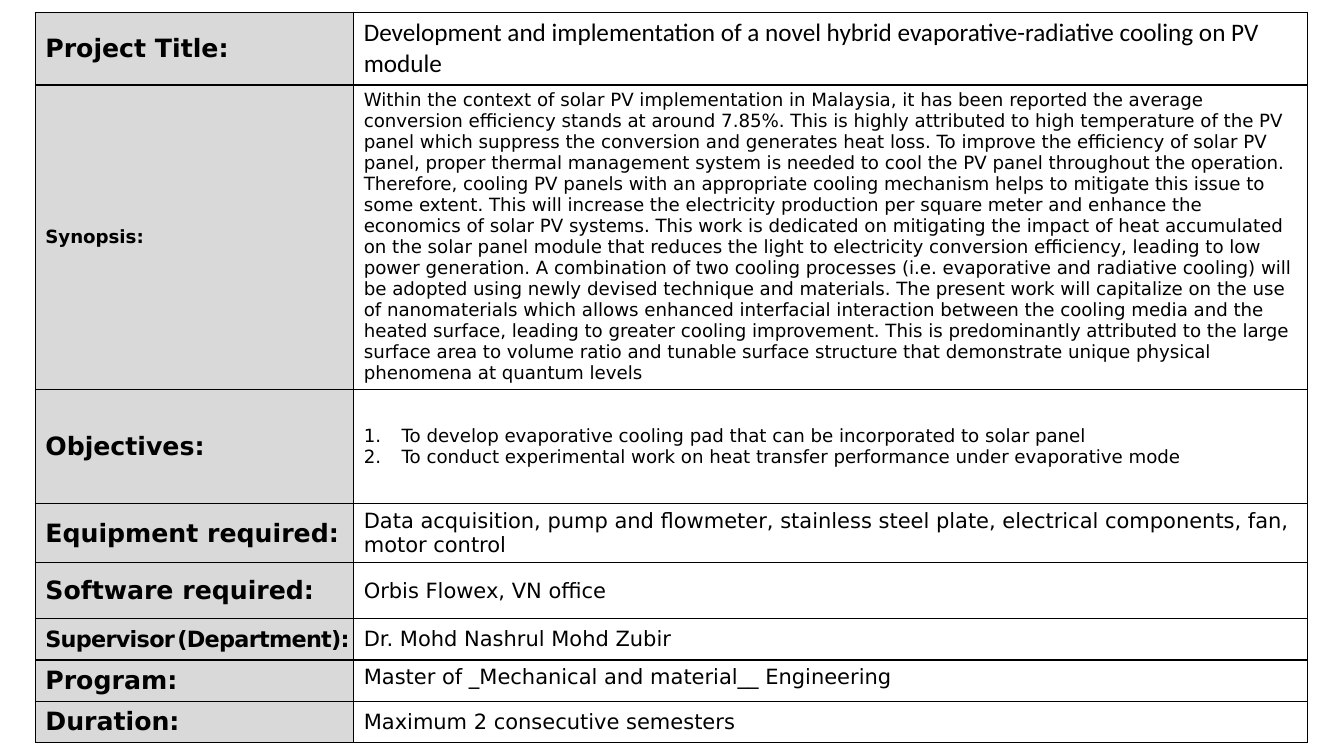
from lxml.etree import SubElement
from pptx import Presentation
from pptx.dml.color import RGBColor
from pptx.enum.text import MSO_ANCHOR as Anchor
from pptx.oxml.ns import qn
from pptx.util import Pt

COLORS = {"ink": "000000", "label": "D9D9D9"}
SANS = "DejaVu Sans"

SYNOPSIS = [
    "Within the context of solar PV implementation in Malaysia, it has been reported the average "
    "conversion efficiency stands at around 7.85%.",
    "This is highly attributed to high temperature of the PV panel which suppress the conversion "
    "and generates heat loss.",
    "To improve the efficiency of solar PV panel, proper thermal management system is needed to "
    "cool the PV panel throughout the operation.",
    "Therefore, cooling PV panels with an appropriate cooling mechanism helps to mitigate this "
    "issue to some extent.",
    "This will increase the electricity production per square meter and enhance the economics of "
    "solar PV systems.",
    "This work is dedicated on mitigating the impact of heat accumulated on the solar panel module "
    "that reduces the light to electricity conversion efficiency, leading to low power generation.",
    "A combination of two cooling processes (i.e. evaporative and radiative cooling) will be "
    "adopted using newly devised technique and materials.",
    "The present work will capitalize on the use of nanomaterials which allows enhanced "
    "interfacial interaction between the cooling media and the heated surface, leading to greater "
    "cooling improvement.",
    "This is predominantly attributed to the large surface area to volume ratio and tunable "
    "surface structure that demonstrate unique physical phenomena at quantum levels",
]
OBJECTIVES = [
    "To develop evaporative cooling pad that can be incorporated to solar panel",
    "To conduct experimental work on heat transfer performance under evaporative mode",
]
SUPERVISOR = [("Supervisor", 16), (" ", 5), ("(Department):", 16)]

# row height, label runs (text, size), detail paragraphs, detail format
ROWS = [
    (52, [("Project Title:", 18)],
     ["Development and implementation of a novel hybrid evaporative-radiative cooling on PV module"],
     {"size": 18, "font": "Calibri"}),
    (191.5, [("Synopsis:", 13)], [" ".join(SYNOPSIS)], {"size": 13}),
    (82, [("Objectives:", 18)], OBJECTIVES, {"size": 13, "numbered": True}),
    (37.5, [("Equipment required:", 18)],
     ["Data acquisition, pump and flowmeter, stainless steel plate, electrical components, fan, "
      "motor control"], {"size": 15}),
    (40, [("Software required:", 18)], ["Orbis Flowex, VN office"], {"size": 15}),
    (29.5, SUPERVISOR, ["Dr. Mohd Nashrul Mohd Zubir"], {"size": 15}),
    (29.5, [("Program:", 18)], ["Master of _Mechanical and material__ Engineering"],
     {"size": 15, "anchor": Anchor.TOP}),
    (29.5, [("Duration:", 18)], ["Maximum 2 consecutive semesters"], {"size": 15}),
]
COLUMNS = (227.5, 681)
LEFT, TOP = 25.2, 8.8


def add_run(paragraph, text, size, font=SANS, bold=False):
    run = paragraph.add_run()
    run.text = text
    for name, value in {"size": Pt(size), "name": font, "bold": bold}.items():
        setattr(run.font, name, value)
    run.font.color.rgb = RGBColor.from_string(COLORS["ink"])
    return run


def draw_borders(cell):
    properties = cell._tc.get_or_add_tcPr()
    for side in ("a:lnL", "a:lnR", "a:lnT", "a:lnB"):
        line = SubElement(properties, qn(side), w=str(Pt(1)))
        fill = SubElement(line, qn("a:solidFill"))
        SubElement(fill, qn("a:srgbClr"), val=COLORS["ink"])


def number_paragraph(paragraph):
    """Give the paragraph a hanging 1., 2., ... number."""
    properties = paragraph._p.get_or_add_pPr()
    properties.set("marL", str(Pt(27)))
    properties.set("indent", str(-Pt(27)))
    SubElement(properties, qn("a:buFont"), typeface="+mj-lt")
    SubElement(properties, qn("a:buAutoNum"), type="arabicPeriod")


def fill_label(cell, runs):
    cell.vertical_anchor = Anchor.MIDDLE
    draw_borders(cell)
    cell.fill.solid()
    cell.fill.fore_color.rgb = RGBColor.from_string(COLORS["label"])
    tight = len(runs) > 1
    if tight:
        cell.margin_right = Pt(0)
    for text, size in runs:
        run = add_run(cell.text_frame.paragraphs[0], text, size, bold=True)
        if tight:
            run.font._element.set("spc", "-50")


def fill_detail(cell, texts, size, font=SANS, numbered=False, anchor=Anchor.MIDDLE):
    cell.vertical_anchor = anchor
    draw_borders(cell)
    cell.fill.background()
    frame = cell.text_frame
    for index, text in enumerate(texts):
        paragraph = frame.add_paragraph() if index else frame.paragraphs[0]
        if numbered:
            number_paragraph(paragraph)
        add_run(paragraph, text, size, font)


def main():
    deck = Presentation()
    deck.slide_width, deck.slide_height = Pt(960), Pt(540)
    slide = deck.slides.add_slide(deck.slide_layouts[6])
    height = sum(row[0] for row in ROWS)
    project = slide.shapes.add_table(len(ROWS), len(COLUMNS), Pt(LEFT), Pt(TOP),
                                     Pt(sum(COLUMNS)), Pt(height)).table
    project.first_row = project.horz_banding = False
    for column, width in zip(project.columns, COLUMNS):
        column.width = Pt(width)
    for index, (row_height, label, detail, style) in enumerate(ROWS):
        project.rows[index].height = Pt(row_height)
        fill_label(project.cell(index, 0), label)
        fill_detail(project.cell(index, 1), detail, **style)
    deck.save("out.pptx")


if __name__ == "__main__":
    main()
